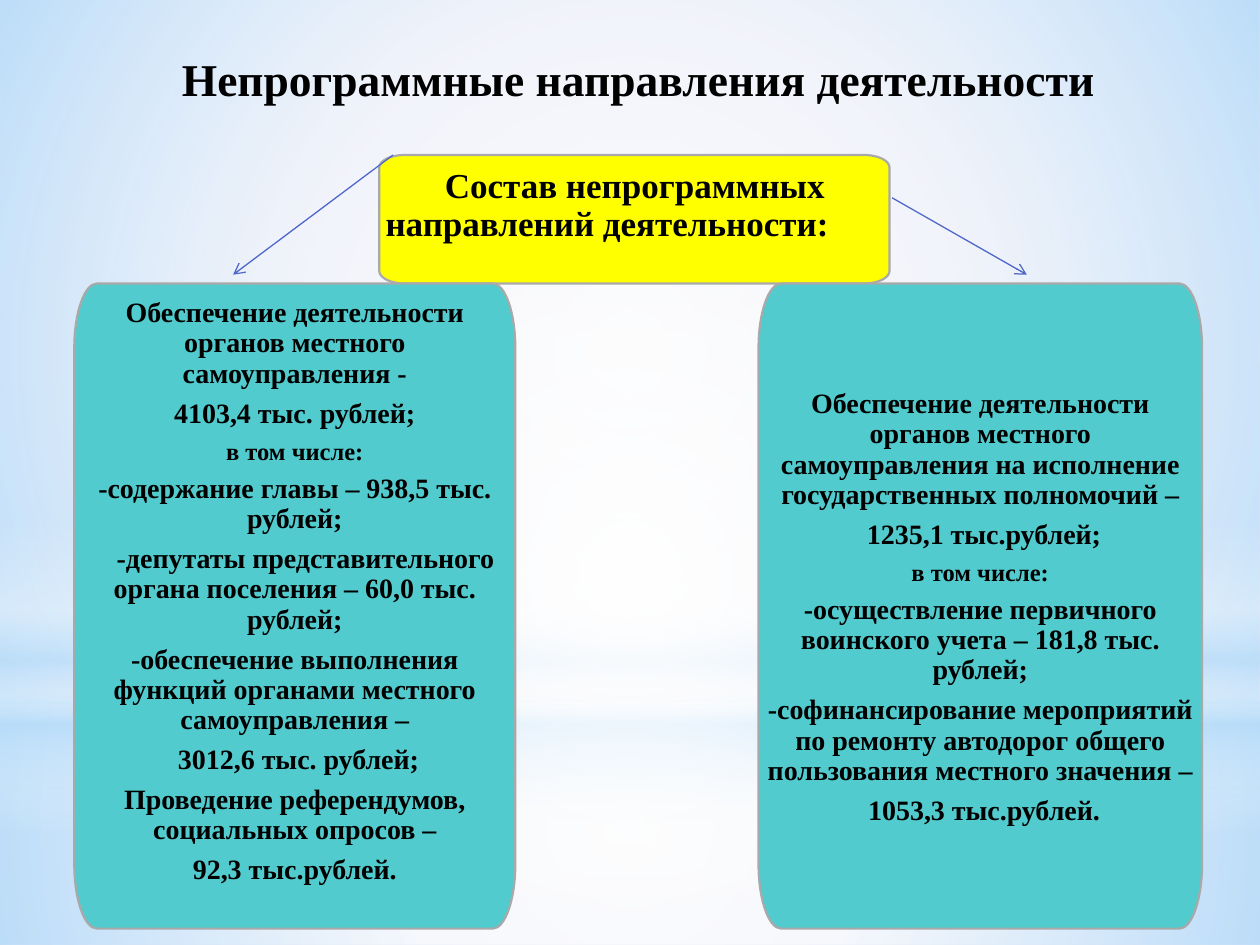
from pptx import Presentation
from pptx.dml.color import RGBColor
from pptx.enum.shapes import MSO_CONNECTOR, MSO_SHAPE
from pptx.enum.text import MSO_ANCHOR, PP_ALIGN
from pptx.oxml import parse_xml
from pptx.oxml.ns import nsdecls, qn
from pptx.util import Inches, Pt

COLORS = {
    "page": "DCE1F4",
    "white": "FFFFFF",
    "sky": "B4DCFA",
    "heading": "FFFF00",
    "panel": "52CBCE",
    "outline": "A9A9A9",
    "arrow": "4E67C8",
    "text": "000000",
}
FONT = "Times New Roman"
CORNER_PULL = 0.55
CIRCLE = '<a:path path="circle"><a:fillToRect l="50000" t="50000" r="50000" b="50000"/></a:path>'
VERTICAL = '<a:lin ang="5400000" scaled="0"/>'
BACKDROP = [
    (MSO_SHAPE.RECTANGLE, 5.58, 1.92, CIRCLE,
     [(0, "white", 91), (37, "white", 76), (100, "sky", 79)]),
    (MSO_SHAPE.RECTANGLE, 0, 5.58, CIRCLE,
     [(0, "white", 89), (48, "white", 62), (100, "sky", 79)]),
    (MSO_SHAPE.RECTANGLE, 4.12, 2.5, VERTICAL,
     [(0, "white", 0), (29, "white", 30), (45, "sky", 40),
      (55, "white", 26), (65, "sky", 60), (100, "white", 0)]),
    (MSO_SHAPE.OVAL, 1.75, 5.58, CIRCLE,
     [(0, "white", 100), (56, "white", 0)]),
]
LOCAL_BODIES = [
    ("Обеспечение деятельности органов местного самоуправления -", 16, 0),
    ("4103,4 тыс. рублей;", 16, 0),
    ("в том числе:", 14, 0),
    ("-содержание главы – 938,5 тыс. рублей;", 16, 0),
    ("-депутаты представительного органа поселения – 60,0 тыс. рублей;", 16, 0.17),
    ("-обеспечение выполнения функций органами местного самоуправления –", 16, 0),
    ("3012,6 тыс. рублей;", 16, 0.06),
    ("Проведение референдумов, социальных опросов –", 16, 0),
    ("92,3 тыс.рублей.", 16, 0),
]
STATE_POWERS = [
    ("Обеспечение деятельности органов местного самоуправления на исполнение "
     "государственных полномочий –", 16, 0),
    ("1235,1 тыс.рублей;", 16, 0.06),
    ("в том числе:", 14, 0),
    ("-осуществление первичного воинского учета – 181,8 тыс. рублей;", 16, 0),
    ("-софинансирование мероприятий по ремонту автодорог общего пользования "
     "местного значения –", 16, 0),
    ("1053,3 тыс.рублей.", 16, 0.06),
]


def color(name):
    return RGBColor.from_string(COLORS[name])


def add_glow(page, kind, top, height, direction, stops):
    glow = page.shapes.add_shape(kind, 0, Inches(top), Inches(10), Inches(height))
    glow.shadow.inherit = False
    glow.line.fill.background()
    glow.fill.background()
    stop_xml = "".join(
        f'<a:gs pos="{position * 1000}"><a:srgbClr val="{COLORS[name]}">'
        f'<a:alpha val="{opacity * 1000}"/></a:srgbClr></a:gs>'
        for position, name, opacity in stops)
    gradient = parse_xml(
        f'<a:gradFill {nsdecls("a")} rotWithShape="1">'
        f'<a:gsLst>{stop_xml}</a:gsLst>{direction}</a:gradFill>')
    properties = glow.element.spPr
    properties.replace(properties.find(qn("a:noFill")), gradient)
    return glow


def add_backdrop(page, master):
    master.background.fill.solid()
    master.background.fill.fore_color.rgb = color("page")
    first_placeholder = master.placeholders[0].element
    for number, layer in enumerate(BACKDROP, start=101):
        glow = add_glow(page, *layer)
        glow.element.nvSpPr.cNvPr.set("id", str(number))
        first_placeholder.addprevious(glow.element)


def add_span(para, text, size):
    span = para.add_run()
    span.text = text
    span.font.name = FONT
    span.font.size = Pt(size)
    span.font.bold = True
    span.font.color.rgb = color("text")


def add_line(para, text, size, alignment, indent=0, margin=0):
    para.alignment = alignment
    para.line_spacing = 0.9
    para.space_after = Pt(size * 0.35)
    properties = para._p.get_or_add_pPr()
    properties.set("marL", str(Inches(margin)))
    properties.set("indent", str(Inches(indent)))
    add_span(para, text, size)


def local_point(segment):
    point = segment.find(qn("a:pt"))
    return int(point.get("x")), int(point.get("y"))


def round_corners(box):
    outline = box.element.spPr.find(".//" + qn("a:path"))
    segments = outline.findall(qn("a:moveTo")) + outline.findall(qn("a:lnTo"))
    ends = [local_point(segment) for segment in segments]
    for index in range(0, 8, 2):
        start, end = ends[index], ends[index + 1]
        corner = (end[0], start[1]) if index in (2, 6) else (start[0], end[1])
        controls = [tuple(round(a + CORNER_PULL * (c - a)) for a, c in zip(point, corner))
                    for point in (start, end)]
        points = "".join(f'<a:pt x="{x}" y="{y}"/>' for x, y in controls + [end])
        curve = parse_xml(f'<a:cubicBezTo {nsdecls("a")}>{points}</a:cubicBezTo>')
        outline.replace(segments[index + 1], curve)


def add_box(page, area, radii, fill, bottom_inset):
    left, top, width, height = (Inches(value) for value in area)
    radius_x, radius_y = (Inches(value) for value in radii)
    right, bottom = left + width, top + height
    builder = page.shapes.build_freeform(left, top + radius_y)
    builder.add_line_segments([
        (left + radius_x, top), (right - radius_x, top),
        (right, top + radius_y), (right, bottom - radius_y),
        (right - radius_x, bottom), (left + radius_x, bottom),
        (left, bottom - radius_y)], close=True)
    box = builder.convert_to_shape()
    round_corners(box)
    box.shadow.inherit = False
    box.fill.solid()
    box.fill.fore_color.rgb = color(fill)
    box.line.color.rgb = color("outline")
    box.line.width = Pt(1.25)
    frame = box.text_frame
    frame.word_wrap = True
    frame.vertical_anchor = MSO_ANCHOR.MIDDLE
    frame.margin_left = frame.margin_right = frame.margin_top = Inches(0.03)
    frame.margin_bottom = Inches(bottom_inset)
    return frame


def add_panel(page, left, width, lines, bottom_inset):
    frame = add_box(page, (left, 2.25, width, 5.12), (0.18, 0.51), "panel", bottom_inset)
    for index, (text, size, indent) in enumerate(lines):
        para = frame.add_paragraph() if index else frame.paragraphs[0]
        add_line(para, text, size, PP_ALIGN.CENTER, indent)


def add_heading(page):
    frame = add_box(page, (3.01, 1.23, 4.05, 1.02), (0.2, 0.1), "heading", 0.24)
    add_line(frame.paragraphs[0], "Состав непрограммных направлений деятельности:", 20,
             PP_ALIGN.LEFT, indent=0.47, margin=0.02)


def add_arrow(page, start, end):
    arrow = page.shapes.add_connector(
        MSO_CONNECTOR.STRAIGHT, *(Inches(value) for value in start + end))
    arrow.line.color.rgb = color("arrow")
    arrow.line.width = Pt(0.75)
    arrow.line._get_or_add_ln().append(parse_xml(f'<a:tailEnd {nsdecls("a")} type="arrow"/>'))
    arrow.element.spPr.append(parse_xml(f'<a:effectLst {nsdecls("a")}/>'))


def add_title(page):
    title = page.shapes.title
    title.left, title.top = Inches(0.74), Inches(0.35)
    title.width, title.height = Inches(8.66), Inches(0.54)
    title.text_frame.word_wrap = True
    title.text_frame.vertical_anchor = MSO_ANCHOR.MIDDLE
    para = title.text_frame.paragraphs[0]
    para.alignment = PP_ALIGN.CENTER
    add_span(para, "Непрограммные направления деятельности", 26)
    title.element.getparent().append(title.element)


def main():
    deck = Presentation()
    deck.slide_width, deck.slide_height = Inches(10), Inches(7.5)
    page = deck.slides.add_slide(deck.slide_layouts[5])
    add_backdrop(page, deck.slide_master)
    add_heading(page)
    add_panel(page, 0.59, 3.5, LOCAL_BODIES, 0.25)
    add_panel(page, 6.02, 3.52, STATE_POWERS, 0)
    add_arrow(page, (3.12, 1.23), (1.85, 2.18))
    add_title(page)
    add_arrow(page, (7.08, 1.57), (8.15, 2.18))
    deck.save("out.pptx")


if __name__ == "__main__":
    main()
